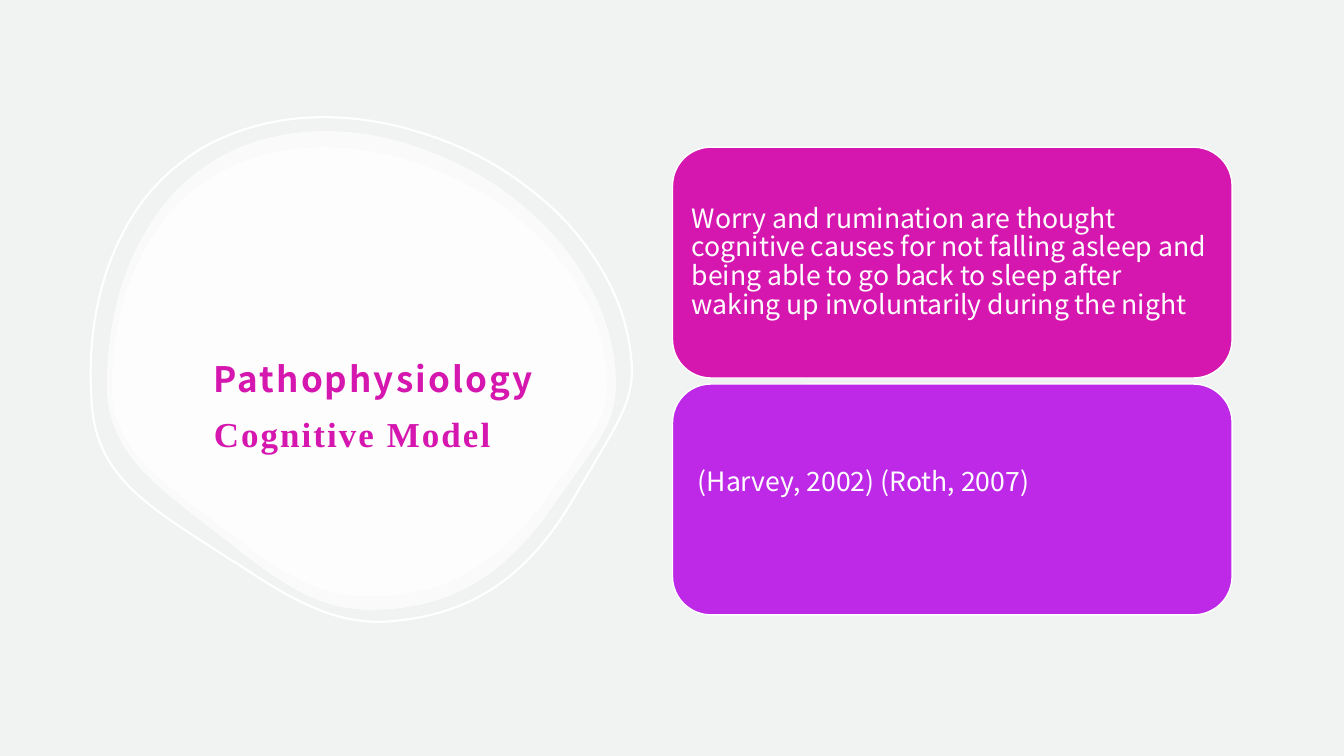
from lxml.etree import SubElement
from pptx import Presentation
from pptx.dml.color import RGBColor
from pptx.enum.shapes import MSO_SHAPE
from pptx.enum.text import MSO_ANCHOR, PP_ALIGN
from pptx.oxml.ns import qn
from pptx.util import Inches, Pt

WHITE = RGBColor(0xFF, 0xFF, 0xFF)
PAPER = RGBColor(0xF0, 0xF3, 0xF2)
MAGENTA = RGBColor(0xD5, 0x17, 0xAF)
PURPLE = RGBColor(0xBD, 0x29, 0xE7)
SANS = "Noto Sans CJK JP"
SERIF = "Times New Roman"

# Pebble outline as cubic curves (two controls, then the end) in its own grid.
PEBBLE_SIZE = (505, 475)
PEBBLE_START = (216, 0)
PEBBLE_CURVES = [
    ((183, 0), (152, 7), (125, 19)),
    ((100, 31), (77, 48), (59, 70)),
    ((21, 116), (0, 180), (0, 252)),
    ((0, 280), (8, 303), (26, 326)),
    ((45, 350), (74, 372), (104, 395)),
    ((109, 399), (115, 404), (121, 408)),
    ((172, 449), (210, 475), (261, 475)),
    ((339, 475), (395, 443), (446, 367)),
    ((453, 357), (460, 348), (466, 339)),
    ((492, 303), (505, 284), (505, 252)),
    ((505, 220), (497, 188), (481, 158)),
    ((466, 128), (444, 101), (416, 77)),
    ((389, 53), (356, 34), (322, 21)),
    ((287, 7), (251, 0), PEBBLE_START),
]


def add_pebble(s, left, top, width, height):
    """Lay out the curve ends as a polygon, then turn each side into its curve."""
    scale = (Inches(width) / PEBBLE_SIZE[0], Inches(height) / PEBBLE_SIZE[1])
    builder = s.shapes.build_freeform(*PEBBLE_START, scale=scale)
    builder.add_line_segments([curve[-1] for curve in PEBBLE_CURVES], close=True)
    sp = builder.convert_to_shape(Inches(left), Inches(top))
    sp.shadow.inherit = False
    sides = list(sp._element.iter(qn("a:lnTo")))
    for side, curve in zip(sides, PEBBLE_CURVES):
        side.tag = qn("a:cubicBezTo")
        side.remove(side[0])
        for x, y in curve:
            SubElement(side, qn("a:pt"), x=str(x), y=str(y))
    return sp


def add_filled_pebble(s, *box):
    sp = add_pebble(s, *box)
    sp.fill.solid()
    sp.fill.fore_color.rgb = WHITE
    sp.line.fill.background()
    color = sp._element.spPr.find(qn("a:solidFill"))[0]
    SubElement(color, qn("a:alpha"), val="60000")


def add_ring(s, *box):
    sp = add_pebble(s, *box)
    sp.rotation = -5
    sp.fill.background()
    sp.line.color.rgb = WHITE
    sp.line.width = Pt(1.5)


def set_frame(tf, left, top, right, bottom):
    frame = dict(word_wrap=True, vertical_anchor=MSO_ANCHOR.MIDDLE,
                 margin_left=Inches(left), margin_top=Inches(top),
                 margin_right=Inches(right), margin_bottom=Inches(bottom))
    for name, value in frame.items():
        setattr(tf, name, value)


def add_run(p, text, color, **font):
    r = p.add_run()
    r.text = text
    r.font.color.rgb = color
    for name, value in font.items():
        setattr(r.font, name, value)
    return r


def add_title(s, left, top, width, height):
    tf = s.shapes.add_textbox(*map(Inches, (left, top, width, height))).text_frame
    set_frame(tf, 0.12, 0.66, 0.12, 0.1)
    p = tf.paragraphs[0]
    p.line_spacing = 1.3
    for text, font in (("Pathophysiology ", SANS), ("Cognitive Model", SERIF)):
        r = add_run(p, text, MAGENTA, name=font, size=Pt(25), bold=True)
        r.font._element.set("spc", "150")


def add_cards(s, left, top, width, height, gap, cards):
    card_height = (height - gap * (len(cards) - 1)) / len(cards)
    for i, (text, color, bottom) in enumerate(cards):
        y = top + i * (card_height + gap)
        sp = s.shapes.add_shape(MSO_SHAPE.ROUNDED_RECTANGLE,
                                *map(Inches, (left, y, width, card_height)))
        sp.shadow.inherit = False
        sp.fill.solid()
        sp.fill.fore_color.rgb = color
        sp.line.color.rgb = WHITE
        sp.line.width = Pt(1)
        set_frame(sp.text_frame, 0.08, 0.08, 0.08, bottom)
        p = sp.text_frame.paragraphs[0]
        p.alignment = PP_ALIGN.LEFT
        p.line_spacing = 0.9
        add_run(p, text, WHITE, name=SANS, size=Pt(19))


def main():
    prs = Presentation()
    prs.slide_width, prs.slide_height = Inches(13.33), Inches(7.5)
    s = prs.slides.add_slide(prs.slide_layouts[6])
    s.background.fill.solid()
    s.background.fill.fore_color.rgb = PAPER

    add_filled_pebble(s, 1.06, 1.3, 5.05, 4.75)
    add_filled_pebble(s, 1.11, 1.46, 4.91, 4.46)
    add_ring(s, 0.89, 1.13, 5.37, 5.05)
    add_title(s, 2, 2.08, 3.62, 3.21)
    add_cards(s, 6.67, 1.46, 5.55, 4.64, 0.06, [
        ("Worry and rumination are thought cognitive causes for not falling "
         "asleep and being able to go back to sleep after waking up "
         "involuntarily during the night", MAGENTA, 0.08),
        (" (Harvey, 2002) (Roth, 2007)", PURPLE, 0.4),
    ])
    prs.save("out.pptx")


if __name__ == "__main__":
    main()
